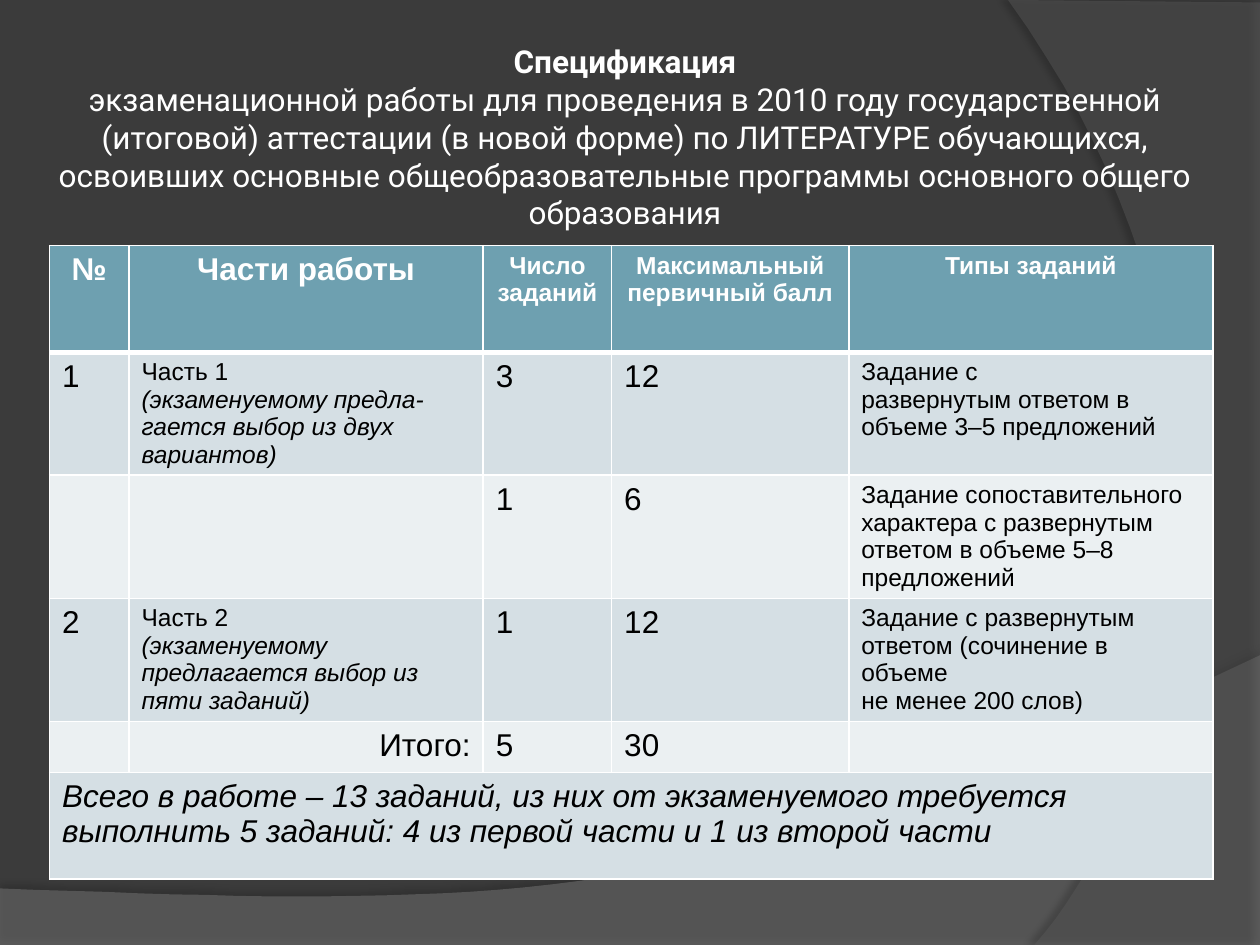
from dataclasses import dataclass

from lxml import etree
from pptx import Presentation
from pptx.dml.color import RGBColor
from pptx.enum.text import MSO_ANCHOR, MSO_AUTO_SIZE, PP_ALIGN
from pptx.oxml.ns import qn
from pptx.util import Cm, Pt

LEFT, CENTER, RIGHT = PP_ALIGN.LEFT, PP_ALIGN.CENTER, PP_ALIGN.RIGHT
WHITE, BLACK = "FFFFFF", "000000"
BACKGROUND, HEADER, BAND_DARK, BAND_LIGHT = "3B3B3B", "6EA0B0", "D5DFE4", "EBF0F2"
COL_WIDTHS = (1.6, 7.14, 2.59, 4.78, 7.34)
ROW_HEIGHTS = (2.15, 2.48, 2.48, 2.48, 0.97, 2.15)


@dataclass
class Swoosh:
    corners: list  # straight part; the curve starts at the last corner
    curve: list    # two control points and the end point
    color: str
    opacity: int
    shadow: tuple  # opacity, blur, distance, direction


@dataclass
class Entry:
    text: str = ""
    size: int = 18
    align: PP_ALIGN = LEFT
    italic_from: int = 99  # first paragraph set in italics


SWOOSHES = [
    Swoosh([(0, 17.91), (0, 19.05), (25.4, 19.05), (25.4, 13.21)],
           [(14.2, 18.52), (9.93, 18.26), (0, 17.91)],
           "7F7F7F", 45, (35, 4, 3.5, 270)),
    Swoosh([(25.4, 0.05), (25.4, 19.05), (20.85, 19.05)],
           [(23.75, 15.72), (25.86, 7.62), (20.32, 0)],
           "5E5E5E", 40, (45, 4, 4, 180)),
]

TITLE = ("Спецификация\vэкзаменационной работы для проведения в 2010 году "
         "государственной (итоговой) аттестации (в новой форме) по ЛИТЕРАТУРЕ "
         "обучающихся, освоивших основные общеобразовательные программы "
         "основного общего\vобразования")

ROWS = [
    [Entry("№", 18, CENTER), Entry("Части работы", 18, CENTER),
     Entry("Число\nзаданий", 14, CENTER),
     Entry("Максимальный\nпервичный балл", 14, CENTER),
     Entry("Типы заданий", 14, CENTER)],
    [Entry("1"),
     Entry("Часть 1\n(экзаменуемому предла-гается выбор из двух вариантов)", 14, italic_from=1),
     Entry("3"), Entry("12"),
     Entry("Задание с\nразвернутым ответом в объеме 3–5 предложений", 14)],
    [Entry(), Entry(), Entry("1"), Entry("6"),
     Entry("Задание сопоставительного\nхарактера с развернутым ответом в объеме 5–8\n"
           "предложений", 14)],
    [Entry("2"),
     Entry("Часть 2\n(экзаменуемому предлагается выбор из пяти заданий)", 14, italic_from=1),
     Entry("1"), Entry("12"),
     Entry("Задание с развернутым ответом (сочинение в объеме\nне менее 200 слов)", 14)],
    [Entry(), Entry("Итого:", align=RIGHT), Entry("5"), Entry("30"), Entry()],
    [Entry("Всего в работе – 13 заданий, из них от экзаменуемого требуется\n"
           "выполнить 5 заданий: 4 из первой части и 1 из второй части", italic_from=0)],
]


def rgb(color: str) -> RGBColor:
    return RGBColor.from_string(color)


def set_font(r, font: str, size: int, color: str, bold: bool, italic: bool = False) -> None:
    r.font.name, r.font.size = font, Pt(size)
    r.font.bold, r.font.italic = bold, italic
    r.font.color.rgb = rgb(color)


def add_color(parent, color: str, opacity: int = 100) -> None:
    clr = etree.SubElement(parent, qn("a:srgbClr"), val=color)
    if opacity < 100:
        etree.SubElement(clr, qn("a:alpha"), val=str(opacity * 1000))


def bezier(points: list, steps: int = 40) -> list:
    def at(t: float) -> tuple:
        weights = ((1 - t) ** 3, 3 * t * (1 - t) ** 2, 3 * t * t * (1 - t), t ** 3)
        return tuple(sum(w * pt[axis] for w, pt in zip(weights, points)) for axis in (0, 1))
    return [at(i / steps) for i in range(1, steps + 1)]


def draw_swoosh(s, swoosh: Swoosh):
    outline = swoosh.corners + bezier([swoosh.corners[-1]] + swoosh.curve)
    points = [(round(x * 100), round(y * 100)) for x, y in outline]
    builder = s.shapes.build_freeform(*points[0], scale=Cm(0.01))
    builder.add_line_segments(points[1:], close=True)
    sp = builder.convert_to_shape()
    sp.fill.solid()
    sp.fill.fore_color.rgb = rgb(swoosh.color)
    clr = sp.element.spPr.find(qn("a:solidFill"))[0]
    etree.SubElement(clr, qn("a:alpha"), val=str(swoosh.opacity * 1000))
    sp.line.fill.background()
    # Soft outer shadow
    sp.shadow.inherit = False
    opacity, blur, distance, direction = swoosh.shadow
    shadow = etree.SubElement(
        sp.element.spPr.find(qn("a:effectLst")), qn("a:outerShdw"),
        blurRad=str(Pt(blur)), dist=str(Pt(distance)),
        dir=str(direction * 60000), rotWithShape="0")
    add_color(shadow, BLACK, opacity)
    return sp


def set_borders(cell, top: int, bottom: int) -> None:
    tc_pr = cell._tc.get_or_add_tcPr()
    for side, width in (("L", 1), ("R", 1), ("T", top), ("B", bottom)):
        ln = etree.SubElement(tc_pr, qn(f"a:ln{side}"), w=str(Pt(width)))
        add_color(etree.SubElement(ln, qn("a:solidFill")), WHITE)


def fill_cell(cell, entry: Entry, header: bool) -> None:
    tf = cell.text_frame
    tf.text = entry.text
    for i, p in enumerate(tf.paragraphs):
        p.alignment = entry.align
        for r in p.runs:
            set_font(r, "Arial", entry.size, WHITE if header else BLACK,
                     header, i >= entry.italic_from)


def draw_table(s) -> None:
    frame = s.shapes.add_table(len(ROW_HEIGHTS), len(COL_WIDTHS), Cm(1), Cm(4.95),
                               Cm(sum(COL_WIDTHS)), Cm(sum(ROW_HEIGHTS)))
    table = frame.table
    for column, width in zip(table.columns, COL_WIDTHS):
        column.width = Cm(width)
    for i, height in enumerate(ROW_HEIGHTS):
        table.rows[i].height = Cm(height)
        color = HEADER if i == 0 else BAND_DARK if i % 2 else BAND_LIGHT
        for cell in table.rows[i].cells:
            set_borders(cell, 3 if i == 1 else 1, 3 if i == 0 else 1)
            cell.fill.solid()
            cell.fill.fore_color.rgb = rgb(color)
        for j, entry in enumerate(ROWS[i]):
            fill_cell(table.cell(i, j), entry, i == 0)
    # The summary row spans the whole width
    last = len(ROW_HEIGHTS) - 1
    table.cell(last, 0).merge(table.cell(last, len(COL_WIDTHS) - 1))


def draw_title(title) -> None:
    title.left, title.top, title.width, title.height = Cm(0.79), Cm(0.76), Cm(23.62), Cm(3.99)
    tf = title.text_frame
    tf.text = TITLE
    tf.word_wrap, tf.auto_size = True, MSO_AUTO_SIZE.NONE
    tf.vertical_anchor = MSO_ANCHOR.MIDDLE
    tf.margin_left = tf.margin_right = tf.margin_top = tf.margin_bottom = Cm(0.13)
    p = tf.paragraphs[0]
    p.alignment = CENTER
    for i, r in enumerate(p.runs):
        set_font(r, "Roboto", 18, WHITE, i == 0)


def main() -> None:
    prs = Presentation()
    prs.slide_width, prs.slide_height = Cm(25.4), Cm(19.05)
    s = prs.slides.add_slide(prs.slide_layouts[5])
    s.background.fill.solid()
    s.background.fill.fore_color.rgb = rgb(BACKGROUND)
    # Backdrop shapes go behind the title
    title = s.shapes.title
    for swoosh in SWOOSHES:
        title.element.addprevious(draw_swoosh(s, swoosh).element)
    draw_title(title)
    draw_table(s)
    prs.save("out.pptx")


if __name__ == "__main__":
    main()
